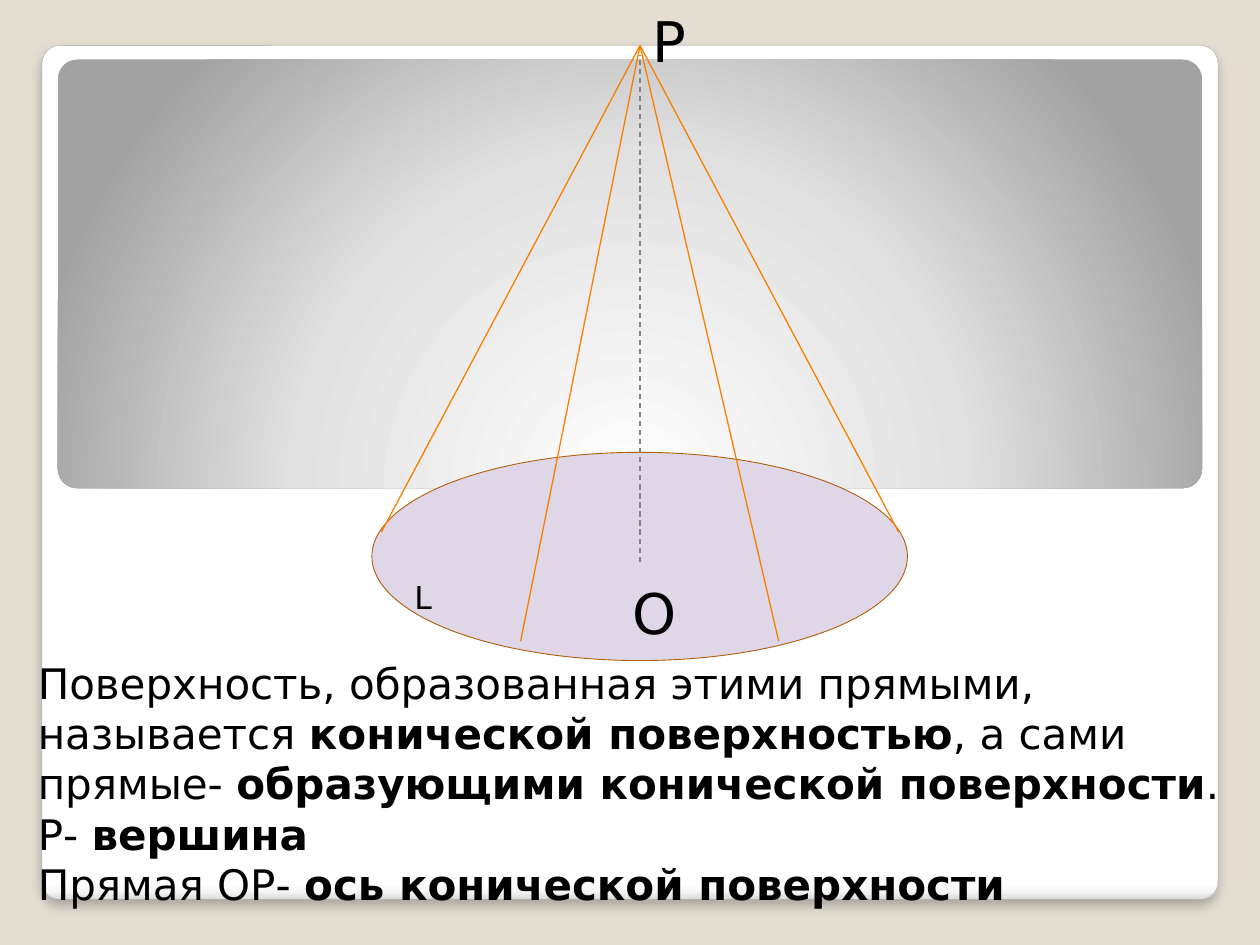
"""Build a slide that shows a conical surface with its apex, axis and generators."""
from lxml import etree
from pptx import Presentation
from pptx.dml.color import RGBColor
from pptx.enum import dml, shapes, text
from pptx.oxml import ns
from pptx.util import Pt

FONT = "DejaVu Sans"
COLORS = {
    "background": "E3DED1", "card_line": "A4A4A4", "base": "DFD7E7", "base_line": "B25E07",
    "axis": "848484", "generator": "F97F00", "text": "000000",
}
CARD = (24, 26, 672, 488)
PANEL = (33, 34, 654, 245)
BASE = (212.5, 258.5, 306, 119)
CARD_STOPS = [(0, "FFFFFF"), (98, "FFFFFF"), (99, "F7F7F7"), (100, "DADADA")]
PANEL_STOPS = [(0, "FFFFFF"), (55, "E1E1E1"), (100, "A2A2A2")]
LINEAR = '<a:lin ang="5400000" scaled="0"/>'
RADIAL = '<a:path path="circle"><a:fillToRect l="50000" t="175000" r="50000" b="-75000"/></a:path>'
SHADOW = (
    '<a:outerShdw blurRad="76200" dist="50800" dir="5400000" algn="tl" rotWithShape="0">'
    '<a:srgbClr val="000000"><a:alpha val="25000"/></a:srgbClr></a:outerShdw>'
)

APEX = (365.75, 26)
AXIS = ((365.75, 321), (365.75, 31.5))
GENERATOR_ENDS = [(297.5, 366.5), (218, 304), (513.5, 304), (445, 366.5)]

LABELS = [
    ("Р", 32, (365.75, 0, 28, 46)),
    ("О", 32, (354.25, 327, 34, 46)),
    ("L", 18, (229.75, 327, 22, 29)),
]
DEFINITION_BOX = (14.5, 372.25, 692, 181.5)
DEFINITION = [
    [("Поверхность, образованная этими прямыми, называется ", False),
     ("конической поверхностью", True),
     (", а сами прямые- ", False),
     ("образующими конической поверхности", True),
     (".", False)],
    [("Р- ", False), ("вершина", True)],
    [("Прямая ОР- ", False), ("ось конической поверхности", True)],
]


def color(name):
    return RGBColor.from_string(COLORS[name])


def points(values):
    return [Pt(value) for value in values]


def element(tag, content=""):
    return etree.fromstring(f'<a:{tag} xmlns:a="{ns.nsuri("a")}">{content}</a:{tag}>')


def add_shape(slide, kind, box):
    shape = slide.shapes.add_shape(kind, *points(box))
    shape.shadow.inherit = False
    shape.line.fill.background()
    return shape


def add_gradient_card(slide, box, radius, stops, direction):
    shape = add_shape(slide, shapes.MSO_SHAPE.ROUNDED_RECTANGLE, box)
    shape.adjustments[0] = radius
    marks = "".join(
        f'<a:gs pos="{position * 1000}"><a:srgbClr val="{value}"/></a:gs>'
        for position, value in stops
    )
    geometry = shape.element.spPr.find(ns.qn("a:prstGeom"))
    geometry.addnext(element("gradFill", f"<a:gsLst>{marks}</a:gsLst>{direction}"))
    return shape


def add_line(slide, start, end, name):
    line = slide.shapes.add_connector(shapes.MSO_CONNECTOR.STRAIGHT, *points(start + end))
    line.line.color.rgb = color(name)
    line.line.width = Pt(0.75)
    line.element.spPr.append(element("effectLst"))
    return line


def add_text(slide, box, paragraphs, size, spacing=None):
    frame = slide.shapes.add_textbox(*points(box)).text_frame
    frame.word_wrap = True
    frame.auto_size = text.MSO_AUTO_SIZE.SHAPE_TO_FIT_TEXT
    for index, runs in enumerate(paragraphs):
        paragraph = frame.add_paragraph() if index else frame.paragraphs[0]
        paragraph.line_spacing = spacing
        for words, bold in runs:
            run = paragraph.add_run()
            run.text = words
            run.font.name = FONT
            run.font.size = Pt(size)
            run.font.bold = bold
            run.font.color.rgb = color("text")


def main():
    presentation = Presentation()
    presentation.slide_width, presentation.slide_height = Pt(720), Pt(540)
    slide = presentation.slides.add_slide(presentation.slide_layouts[6])
    slide.background.fill.solid()
    slide.background.fill.fore_color.rgb = color("background")

    card = add_gradient_card(slide, CARD, 0.021, CARD_STOPS, LINEAR)
    card.line.color.rgb = color("card_line")
    card.line.width = Pt(0.16)
    effects = card.element.spPr.find(ns.qn("a:effectLst"))
    effects.getparent().replace(effects, element("effectLst", SHADOW))
    add_gradient_card(slide, PANEL, 0.046, PANEL_STOPS, RADIAL)

    base = add_shape(slide, shapes.MSO_SHAPE.OVAL, BASE)
    base.fill.solid()
    base.fill.fore_color.rgb = color("base")
    base.line.color.rgb = color("base_line")
    base.line.width = Pt(0.5)

    axis = add_line(slide, *AXIS, "axis")
    axis.line.dash_style = dml.MSO_LINE.DASH
    for end in GENERATOR_ENDS:
        add_line(slide, APEX, end, "generator")

    for letter, size, box in LABELS:
        add_text(slide, box, [[(letter, False)]], size)
    add_text(slide, DEFINITION_BOX, DEFINITION, 24, Pt(28.7))
    presentation.save("out.pptx")


if __name__ == "__main__":
    main()
